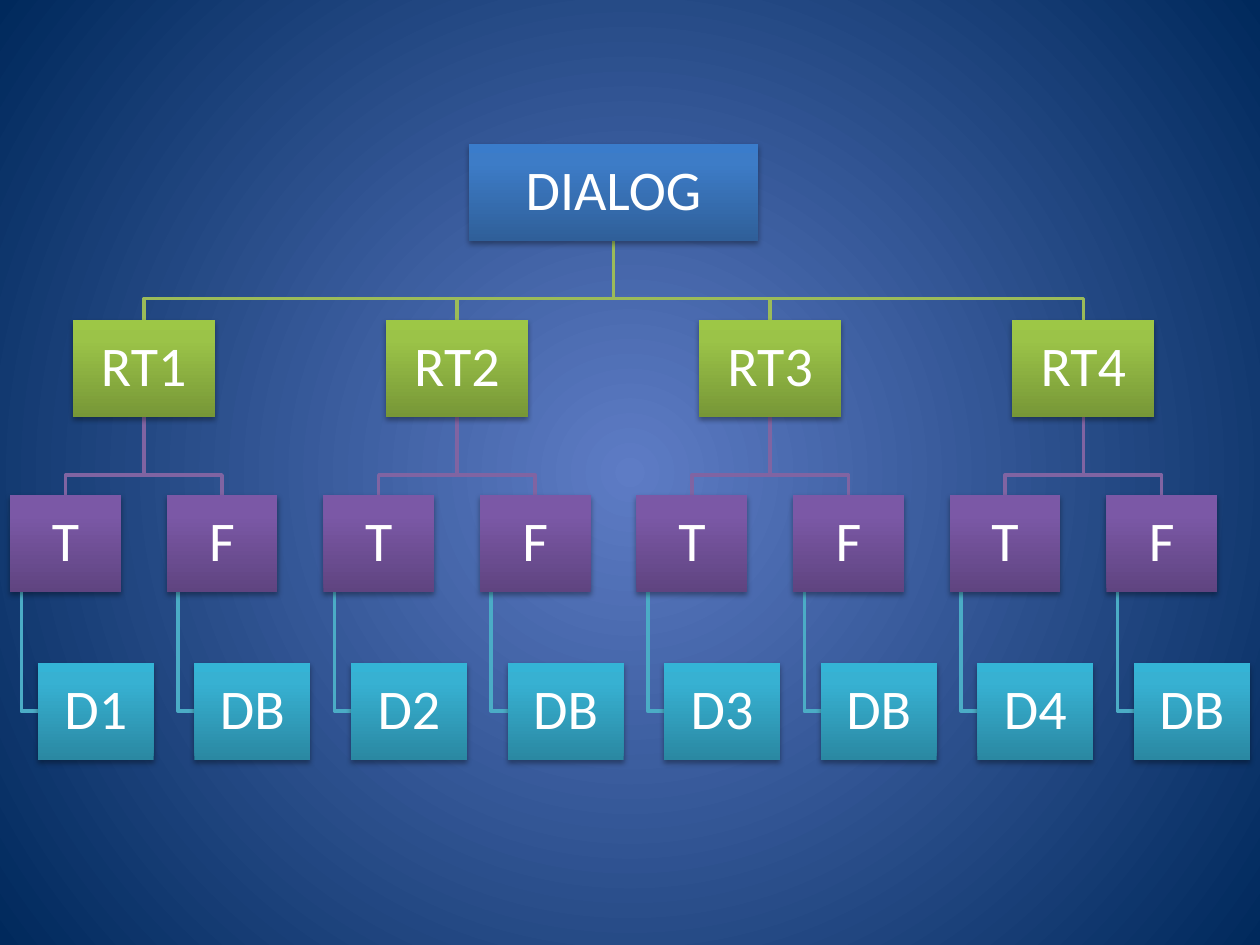
from lxml.etree import SubElement
from pptx import Presentation
from pptx.dml.color import RGBColor
from pptx.enum.shapes import MSO_SHAPE
from pptx.enum.text import MSO_ANCHOR, PP_ALIGN
from pptx.oxml import parse_xml
from pptx.oxml.ns import nsdecls, qn
from pptx.util import Inches, Pt

ROOT = "DIALOG"
TREE = [
    ("RT1", [("T", "D1"), ("F", "DB")]),
    ("RT2", [("T", "D2"), ("F", "DB")]),
    ("RT3", [("T", "D3"), ("F", "DB")]),
    ("RT4", [("T", "D4"), ("F", "DB")]),
]

COLORS = {
    "text": "FFFFFF", "shade": "000000",
    "inner": "5E7CC5", "outer": "00295C",
    "route": "9BBB59", "test": "8064A2", "leaf": "4BACC6",
}
BLENDS = {
    "root": ("2F5F99", "3D7CC7", "3A7CCB"),
    "route": ("779737", "9BC348", "9DC746"),
    "test": ("5F4480", "7B58A6", "7C57A8"),
    "leaf": ("2A88A2", "37B1D2", "34B4D6"),
}
TOPS = {"root": 1.14, "route": 2.54, "test": 3.93, "leaf": 5.26}
WIDTHS = {"root": 2.3, "route": 1.13, "test": 0.88, "leaf": 0.92}
HIGH = 0.77
DROP = 0.46
FIRST, LAST = 0.52, 9.22
STEP = (LAST - FIRST) / (2 * len(TREE) - 1)
INDENT = 0.24
HOOK = 0.09


def blend(owner, stops, way):
    marks = "".join(
        f'<a:gs pos="{pos * 1000}"><a:srgbClr val="{hue}"/></a:gs>'
        for pos, hue in stops
    )
    old = owner.find(".//" + qn("a:solidFill"))
    new = parse_xml(
        f'<a:gradFill {nsdecls("a")} rotWithShape="1">'
        f"<a:gsLst>{marks}</a:gsLst>{way}</a:gradFill>"
    )
    old.getparent().replace(old, new)


def shade(shape):
    shape.shadow.inherit = False
    glow = shape.element.spPr.find(qn("a:effectLst"))
    cast = SubElement(glow, qn("a:outerShdw"), blurRad="40000", dist="23000",
                      dir="5400000", rotWithShape="0")
    hue = SubElement(cast, qn("a:srgbClr"), val=COLORS["shade"])
    SubElement(hue, qn("a:alpha"), val="35000")


def box(slide, label, level, mid):
    wide = WIDTHS[level]
    shape = slide.shapes.add_shape(
        MSO_SHAPE.RECTANGLE, Inches(mid - wide / 2), Inches(TOPS[level]),
        Inches(wide), Inches(HIGH))
    shape.fill.solid()
    blend(shape.element, zip((0, 80, 100), BLENDS[level]),
          '<a:lin ang="16200000" scaled="0"/>')
    shape.line.fill.background()
    shade(shape)
    frame = shape.text_frame
    frame.margin_left = frame.margin_right = Inches(0.02)
    frame.margin_top = frame.margin_bottom = Inches(0.02)
    frame.vertical_anchor = MSO_ANCHOR.MIDDLE
    frame.word_wrap = True
    frame.text = label
    para = frame.paragraphs[0]
    para.alignment = PP_ALIGN.CENTER
    para.line_spacing = 0.9
    font = para.runs[0].font
    font.name, font.size = "Calibri", Pt(32)
    font.color.rgb = RGBColor.from_string(COLORS["text"])


def link(slide, points, level):
    spots = [(Inches(x), Inches(y)) for x, y in points]
    pen = slide.shapes.build_freeform(*spots[0])
    pen.add_line_segments(spots[1:], close=False)
    shape = pen.convert_to_shape()
    shape.fill.background()
    shape.shadow.inherit = False
    shape.line.width = Pt(2)
    shape.line.color.rgb = RGBColor.from_string(COLORS[level])


def elbow(start, end, above, level):
    base = TOPS[above] + HIGH
    bend = base + DROP
    return [(start, base), (start, bend), (end, bend), (end, TOPS[level])]


def hook(mid):
    x = mid - WIDTHS["test"] / 2 + HOOK
    y = TOPS["leaf"] + HIGH / 2
    edge = mid + INDENT - WIDTHS["leaf"] / 2
    return [(x, TOPS["test"] + HIGH), (x, y), (edge, y)]


def main():
    deck = Presentation()
    deck.slide_width, deck.slide_height = Inches(10), Inches(7.5)
    slide = deck.slides.add_slide(deck.slide_layouts[6])
    slide.background.fill.solid()
    blend(slide.element, ((0, COLORS["inner"]), (100, COLORS["outer"])),
          '<a:path path="circle"><a:fillToRect l="50000" t="50000" '
          'r="50000" b="50000"/></a:path>')

    center = (FIRST + LAST) / 2
    nodes, lines = [(ROOT, "root", center)], []
    for row, (route, tests) in enumerate(TREE):
        left = FIRST + 2 * row * STEP
        mid = left + STEP / 2
        nodes.append((route, "route", mid))
        lines.append((elbow(center, mid, "root", "route"), "route"))
        for col, (test, leaf) in enumerate(tests):
            x = left + col * STEP
            nodes += [(test, "test", x), (leaf, "leaf", x + INDENT)]
            lines += [(elbow(mid, x, "route", "test"), "test"),
                      (hook(x), "leaf")]

    for points, level in lines:
        link(slide, points, level)
    for label, level, mid in nodes:
        box(slide, label, level, mid)
    deck.save("out.pptx")


if __name__ == "__main__":
    main()
